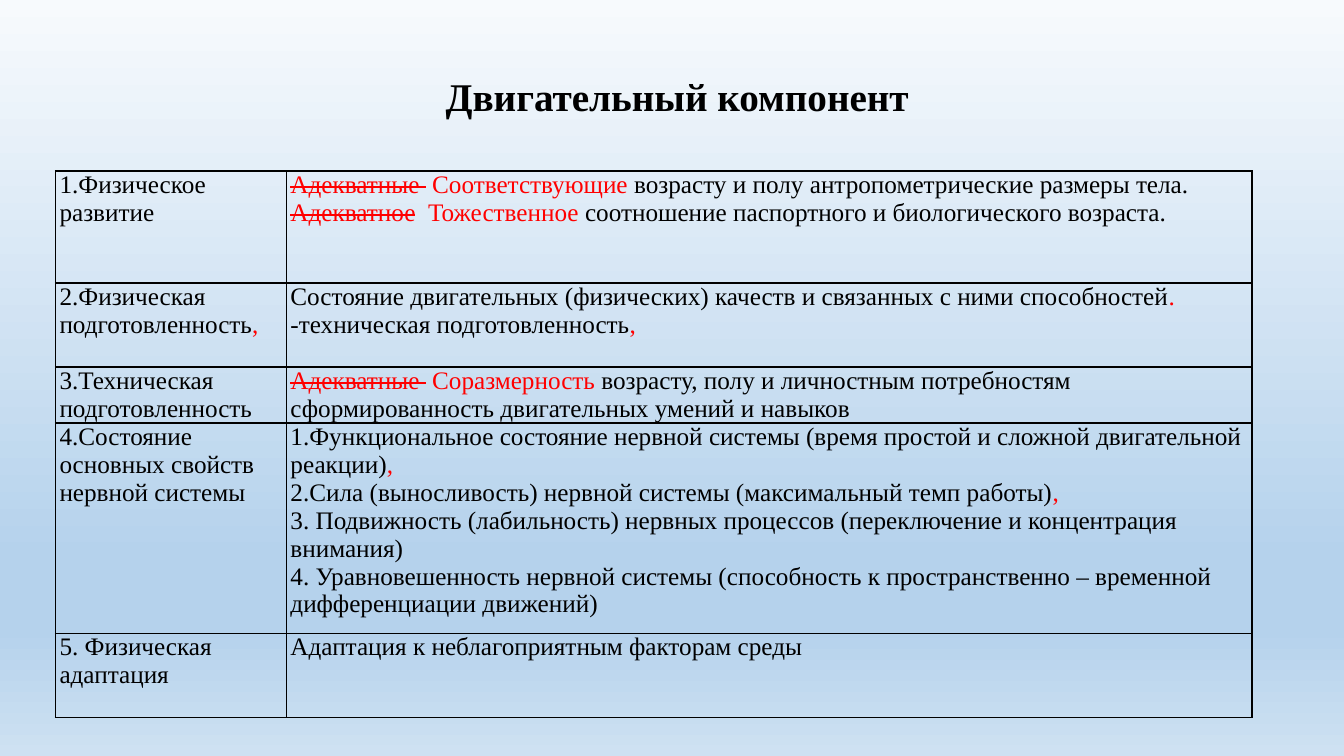
import pptx
import pptx.dml.color
import pptx.enum.text
import pptx.oxml
import pptx.oxml.ns
import pptx.util
from pptx.dml.color import RGBColor
from pptx.util import Cm

BLACK = RGBColor(0x00, 0x00, 0x00)
RED = RGBColor(0xFF, 0x00, 0x00)
SKY_TOP = RGBColor(0xF7, 0xFA, 0xFD)
SKY_DEEP = RGBColor(0xB5, 0xD2, 0xEC)
SKY_BOTTOM = RGBColor(0xCE, 0xE1, 0xF2)
SKY = [(0, SKY_TOP), (74, SKY_DEEP), (83, SKY_DEEP), (100, SKY_BOTTOM)]

NS = pptx.oxml.ns.nsdecls("a")


# Run markers used in the table content
def red(text):
    return text, RED, False


def struck(text):
    return text, RED, True


# Each row: height in cm, then two cells; a cell is a list of paragraphs
ROWS = [
    (2.82,
     [["1.Физическое развитие"]],
     [[struck("Адекватные "), red(" Соответствующие "),
       "возрасту и полу антропометрические размеры тела."],
      [struck("Адекватное"), "  ", red("Тожественное "),
       "соотношение паспортного и биологического возраста."]]),
    (2.12,
     [["2.Физическая подготовленность", red(",")]],
     [["Состояние двигательных (физических) качеств и связанных с ними способностей", red(".")],
      ["-техническая подготовленность", red(",")]]),
    (1.41,
     [["3.Техническая подготовленность"]],
     [[struck("Адекватные "), red(" Соразмерность"),
       " возрасту, полу и личностным потребностям "
       "сформированность двигательных умений и навыков"]]),
    (5.3,
     [["4.Состояние основных свойств нервной системы"]],
     [["1.Функциональное состояние нервной системы "
       "(время простой и сложной двигательной реакции)", red(",")],
      ["2.Сила (выносливость) нервной системы (максимальный темп работы)", red(",")],
      ["3. Подвижность (лабильность) нервных процессов "
       "(переключение и концентрация внимания)"],
      ["4. Уравновешенность нервной системы (способность к "
       "пространственно – временной дифференциации движений)"]]),
    (2.12,
     [["5. Физическая адаптация"]],
     [["Адаптация к неблагоприятным факторам среды"]]),
]


class SlideBuilder:
    font = "Times New Roman"
    title_size = 28
    body_size = 18
    border_pt = 1

    def __init__(self, prs):
        self.s = prs.slides.add_slide(prs.slide_layouts[5])

    def background(self, stops):
        fill = self.s.background.fill
        fill.gradient()
        fill.gradient_angle = 270
        gs_list = self.s.background._cSld.find(".//" + pptx.oxml.ns.qn("a:gsLst"))
        for gs in list(gs_list):
            gs_list.remove(gs)
        for percent, color in stops:
            gs_list.append(pptx.oxml.parse_xml(
                f'<a:gs {NS} pos="{percent * 1000}"><a:srgbClr val="{color}"/></a:gs>'))

    def style(self, r, size, color=BLACK, bold=False, strike=False):
        r.font.name = self.font
        r.font.size = pptx.util.Pt(size)
        r.font.color.rgb = color
        r.font.bold = bold
        if strike:
            r._r.get_or_add_rPr().set("strike", "sngStrike")

    def title(self, text, left, top, width, height):
        sp = self.s.shapes.title
        sp.left, sp.top, sp.width, sp.height = left, top, width, height
        tf = sp.text_frame
        tf.text = text
        tf.vertical_anchor = pptx.enum.text.MSO_ANCHOR.MIDDLE
        p = tf.paragraphs[0]
        p.alignment = pptx.enum.text.PP_ALIGN.CENTER
        p.line_spacing = 0.9
        self.style(p.runs[0], self.title_size, bold=True)

    def cell(self, cell, paragraphs):
        cell.margin_left = cell.margin_right = Cm(0.1)
        cell.margin_top = cell.margin_bottom = 0
        # Borders come before the fill in the cell properties
        tc_pr = cell._tc.get_or_add_tcPr()
        for side in ("lnL", "lnR", "lnT", "lnB"):
            tc_pr.append(pptx.oxml.parse_xml(
                f'<a:{side} {NS} w="{pptx.util.Pt(self.border_pt)}"><a:solidFill>'
                f'<a:srgbClr val="{BLACK}"/></a:solidFill></a:{side}>'))
        cell.fill.background()
        tf = cell.text_frame
        for i, runs in enumerate(paragraphs):
            p = tf.add_paragraph() if i else tf.paragraphs[0]
            for run in runs:
                text, color, strike = (run, BLACK, False) if isinstance(run, str) else run
                r = p.add_run()
                r.text = text
                self.style(r, self.body_size, color, strike=strike)

    def table(self, rows, left, top, widths):
        height = sum(row[0] for row in rows)
        table = self.s.shapes.add_table(
            len(rows), len(widths), left, top, Cm(sum(widths)), Cm(height)).table
        table.first_row = table.horz_banding = False
        for column, width in zip(table.columns, widths):
            column.width = Cm(width)
        for i, (row_height, *cells) in enumerate(rows):
            table.rows[i].height = Cm(row_height)
            for j, paragraphs in enumerate(cells):
                self.cell(table.cell(i, j), paragraphs)


def main():
    prs = pptx.Presentation()
    prs.slide_width, prs.slide_height = Cm(33.87), Cm(19.05)
    slide = SlideBuilder(prs)
    slide.background(SKY)
    slide.title("Двигательный компонент", Cm(2.46), Cm(0.64), Cm(29.21), Cm(3.68))
    # Components of movement and their criteria
    slide.table(ROWS, Cm(1.4), Cm(4.31), [5.82, 24.33])
    prs.save("out.pptx")


if __name__ == "__main__":
    main()
